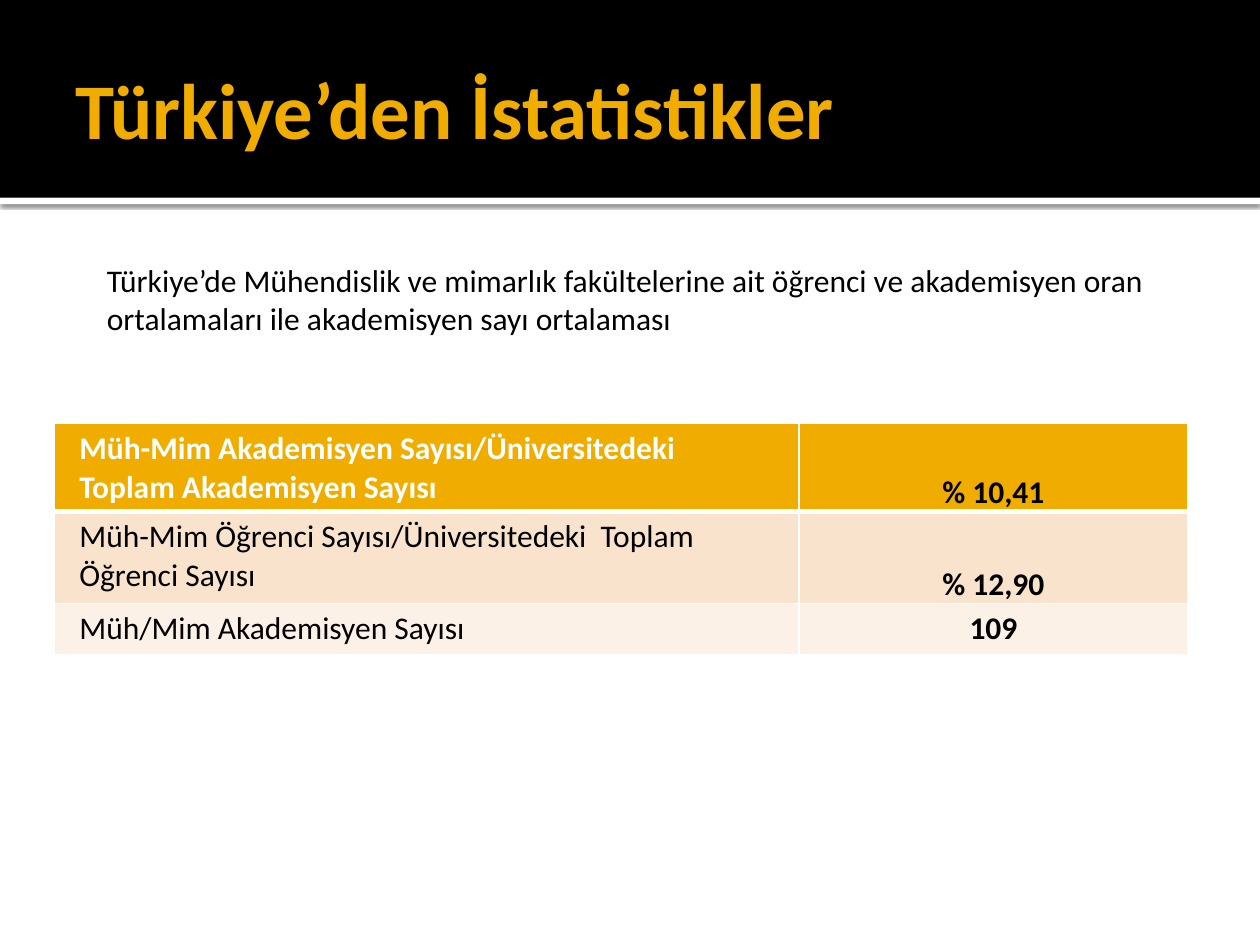
from lxml import etree
from pptx import Presentation
from pptx import util as u
from pptx.dml.color import RGBColor
from pptx.enum import shapes, text
from pptx.oxml import ns, parse_xml

TITLE = "Türkiye’den İstatistikler"
INTRO = ("Türkiye’de Mühendislik ve mimarlık fakültelerine ait öğrenci ve akademisyen "
         "oran ortalamaları ile akademisyen sayı ortalaması")
ROWS = [
    ("Müh-Mim Akademisyen Sayısı/Üniversitedeki Toplam Akademisyen Sayısı", "% 10,41"),
    ("Müh-Mim Öğrenci Sayısı/Üniversitedeki  Toplam Öğrenci Sayısı", "% 12,90"),
    ("Müh/Mim Akademisyen Sayısı", "109"),
]
COLS = [5.91, 3.09]
TALL = [0.7, 0.73, 0.41]
FILLS = ["F0AD00", "F9E3CC", "FCF1E7"]
BANDS = [((0, 1.57, 10, 0.05), "FFFFFF"), ((0, 0, 10, 1.57), "000000")]
WIDE = (0.2, 0.05, 0.2, 0.05)
SLIM = (0.01, 0.01, 0.01, 0)
TOP, MID, LOW = text.MSO_ANCHOR.TOP, text.MSO_ANCHOR.MIDDLE, text.MSO_ANCHOR.BOTTOM
LEFT, MAIN = text.PP_ALIGN.LEFT, text.PP_ALIGN.CENTER
SHADE = (f'<a:effectLst {ns.nsdecls("a")}><a:outerShdw blurRad="{u.Pt(2.5)}" '
         f'dist="{u.Pt(0.8)}" dir="5400000" rotWithShape="0"><a:srgbClr val="000000">'
         '<a:alpha val="60000"/></a:srgbClr></a:outerShdw></a:effectLst>')


def color(code):
    return RGBColor.from_string(code)


def place(box):
    return [u.Inches(n) for n in box]


def paint(item, code):
    item.fill.solid()
    item.fill.fore_color.rgb = color(code)


def inset(item, pads):
    for side, pad in zip(("left", "top", "right", "bottom"), pads):
        setattr(item, f"margin_{side}", u.Inches(pad))


def write(frame, words, code="000000", size=18, bold=False, align=LEFT):
    par = frame.paragraphs[0]
    par.alignment = align
    run = par.add_run()
    run.text = words
    look = {"name": "Calibri", "size": u.Pt(size), "bold": bold}
    for key, val in look.items():
        setattr(run.font, key, val)
    run.font.color.rgb = color(code)


def label(slide, box, words, anchor=TOP, pads=(0.1, 0.05, 0.1, 0.05), **look):
    frame = slide.shapes.add_textbox(*place(box)).text_frame
    frame.word_wrap = True
    frame.vertical_anchor = anchor
    inset(frame, pads)
    write(frame, words, **look)


def edge(cell, sides):
    props = cell._tc.get_or_add_tcPr()
    for spot, (side, width) in enumerate(sides.items()):
        line = etree.Element(ns.qn(f"a:ln{side}"), w=str(u.Pt(width)))
        fill = etree.SubElement(line, ns.qn("a:solidFill"))
        etree.SubElement(fill, ns.qn("a:srgbClr"), val="FFFFFF")
        props.insert(spot, line)


def bands(slide):
    for box, code in BANDS:
        band = slide.shapes.add_shape(shapes.MSO_SHAPE.RECTANGLE, *place(box))
        paint(band, code)
        band.line.fill.background()
        if code == "FFFFFF":
            band._element.spPr.append(parse_xml(SHADE))
        else:
            band.shadow.inherit = False


def table(slide):
    box = (0.43, 3.36, sum(COLS), sum(TALL))
    grid = slide.shapes.add_table(len(ROWS), len(COLS), *place(box)).table
    for col, width in zip(grid.columns, COLS):
        col.width = u.Inches(width)
    for r, pair in enumerate(ROWS):
        grid.rows[r].height = u.Inches(TALL[r])
        for c, words in enumerate(pair):
            cell = grid.cell(r, c)
            low = c == 1 and r < 2
            inset(cell, SLIM if low else WIDE)
            cell.vertical_anchor = LOW if low else TOP
            paint(cell, FILLS[r])
            edge(cell, {"L": 1, "R": 1, "T": 3 if r == 1 else 1, "B": 3 if r == 0 else 1})
            write(cell.text_frame, words, "FFFFFF" if r + c == 0 else "000000",
                  bold=r == 0 or c == 1, align=MAIN if c else LEFT)


def main():
    deck = Presentation()
    deck.slide_width, deck.slide_height = place((10, 7.5))
    slide = deck.slides.add_slide(deck.slide_layouts[6])
    bands(slide)
    label(slide, (0.5, 0.17, 9, 1.37), TITLE, MID, (0.1, 0.05, 0.05, 0.05),
          code="F0AD00", size=45, bold=True)
    table(slide)
    label(slide, (0.75, 2.02, 8.5, 0.71), INTRO)
    deck.save("out.pptx")


if __name__ == "__main__":
    main()
